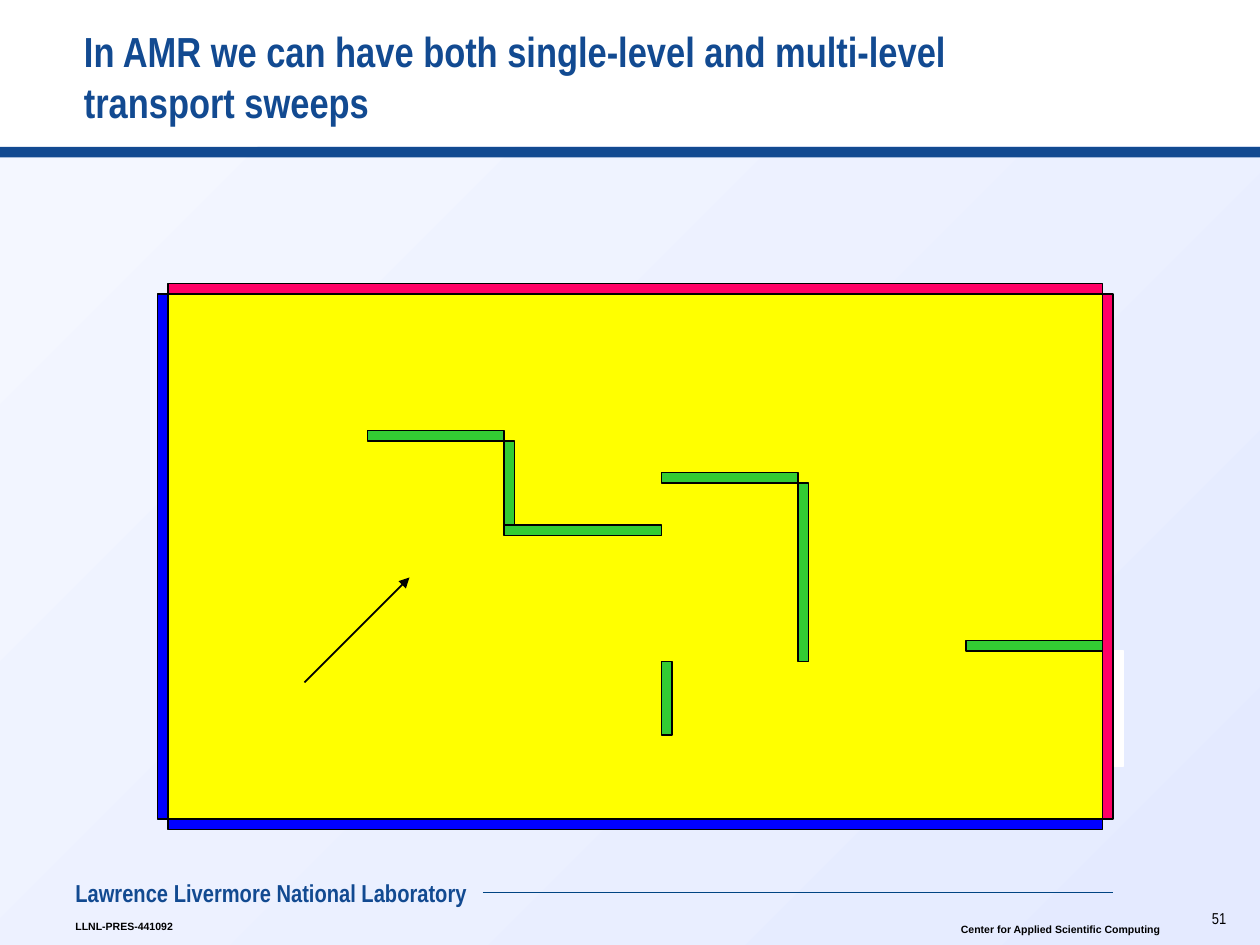
from typing import NamedTuple

from lxml import etree
from pptx import Presentation
from pptx.dml.color import RGBColor
from pptx.enum.shapes import MSO_CONNECTOR, MSO_SHAPE
from pptx.enum.text import MSO_ANCHOR, PP_ALIGN
from pptx.oxml.ns import qn
from pptx.util import Pt

RECT = MSO_SHAPE.RECTANGLE
STRAIGHT = MSO_CONNECTOR.STRAIGHT
TOP, BOTTOM = MSO_ANCHOR.TOP, MSO_ANCHOR.BOTTOM
LEFT, RIGHT = PP_ALIGN.LEFT, PP_ALIGN.RIGHT

NAVY, BLACK, WHITE = "124A91", "000000", "FFFFFF"
BLUE, PINK, YELLOW, GREEN = "0000FF", "FF0066", "FFFF00", "33CC33"
CELL = 6  # mesh spacing in points; every bar is one cell thick


class Block(NamedTuple):
    """A rectangle measured in mesh cells."""
    x: int
    y: int
    w: int
    h: int
    fill: str
    line: str = BLACK


BLOCKS = [
    # Inflow boundary
    Block(15, 28, 1, 50, BLUE),
    Block(16, 78, 89, 1, BLUE),
    # Outflow boundary and domain
    Block(16, 27, 89, 1, PINK),
    Block(16, 28, 89, 50, YELLOW),
    # Level interfaces
    Block(35, 41, 13, 1, GREEN),
    Block(48, 42, 1, 8, GREEN),
    Block(48, 50, 15, 1, GREEN),
    Block(63, 63, 1, 7, GREEN),
    Block(63, 45, 13, 1, GREEN),
    Block(76, 46, 1, 17, GREEN),
    Block(92, 61, 13, 1, GREEN),
    # Right edge
    Block(106, 62, 1, 11, WHITE, WHITE),
    Block(105, 28, 1, 50, PINK),
]


def rgb(color: str) -> RGBColor:
    return RGBColor.from_string(color)


def add_rect(s, x: float, y: float, w: float, h: float,
             fill: str, line: str | None = None):
    sp = s.shapes.add_shape(RECT, Pt(x), Pt(y), Pt(w), Pt(h))
    sp.shadow.inherit = False
    sp.fill.solid()
    sp.fill.fore_color.rgb = rgb(fill)
    if line:
        sp.line.color.rgb = rgb(line)
        sp.line.width = Pt(1)
    else:
        sp.line.fill.background()
    return sp


def add_block(s, b: Block) -> None:
    add_rect(s, b.x * CELL, b.y * CELL, b.w * CELL, b.h * CELL, b.fill, b.line)


def add_line(s, x1: float, y1: float, x2: float, y2: float,
             color: str, width: float, arrow: bool = False) -> None:
    cx = s.shapes.add_connector(STRAIGHT, Pt(x1), Pt(y1), Pt(x2), Pt(y2))
    cx.line.color.rgb = rgb(color)
    cx.line.width = Pt(width)
    if arrow:
        etree.SubElement(cx.line._get_or_add_ln(), qn("a:tailEnd"), type="triangle")
    etree.SubElement(cx._element.spPr, qn("a:effectLst"))


def add_text(s, text: str, x: float, y: float, w: float, h: float, *,
             size: float, font: str = "Arial Narrow", color: str = BLACK,
             bold: bool = True, align=LEFT, anchor=TOP, inset: float = 7.2,
             wrap: bool = True, spacing: float = 1.0) -> None:
    tf = s.shapes.add_textbox(Pt(x), Pt(y), Pt(w), Pt(h)).text_frame
    tf.word_wrap = wrap
    tf.vertical_anchor = anchor
    tf.margin_left = Pt(inset)
    p = tf.paragraphs[0]
    p.alignment = align
    p.line_spacing = spacing
    r = p.add_run()
    r.text = text
    r.font.size = Pt(size)
    r.font.name = font
    r.font.bold = bold
    r.font.color.rgb = rgb(color)


def main() -> None:
    prs = Presentation()
    prs.slide_width, prs.slide_height = Pt(720), Pt(540)
    s = prs.slides.add_slide(prs.slide_layouts[6])

    # Shaded body and header band
    body = add_rect(s, 0, 84, 720, 456, WHITE)
    body.fill.gradient()
    body.fill.gradient_angle = 315
    for stop, color in zip(body.fill.gradient_stops, ("F4F7FF", "E4EAFF")):
        stop.color.rgb = rgb(color)
    add_rect(s, 0, 84, 720, 6, NAVY)

    # Footer
    add_line(s, 276, 510, 636, 510, "004483", 0.5)
    add_text(s, "51", 683, 518.4, 24.8, 15, size=9, bold=False,
             align=RIGHT, inset=0, spacing=0.75)
    add_text(s, "LLNL-PRES-441092", 36, 522, 71.3, 14.4,
             size=6, font="Arial", wrap=False)
    add_text(s, "Center for Applied Scientific Computing", 542, 524, 128.2, 14.4,
             size=6, font="Arial", wrap=False)
    add_text(s, "Lawrence Livermore National Laboratory", 36, 498, 258, 24,
             size=14, color=NAVY)

    # Title
    add_text(s, "In AMR we can have both single-level and multi-level transport sweeps",
             48, 12, 534, 64, size=24, color=NAVY, anchor=BOTTOM, inset=0)

    # Mesh and sweep direction
    for block in BLOCKS:
        add_block(s, block)
    add_line(s, 174, 390, 234, 330, BLACK, 1, arrow=True)

    prs.save("out.pptx")


if __name__ == "__main__":
    main()
